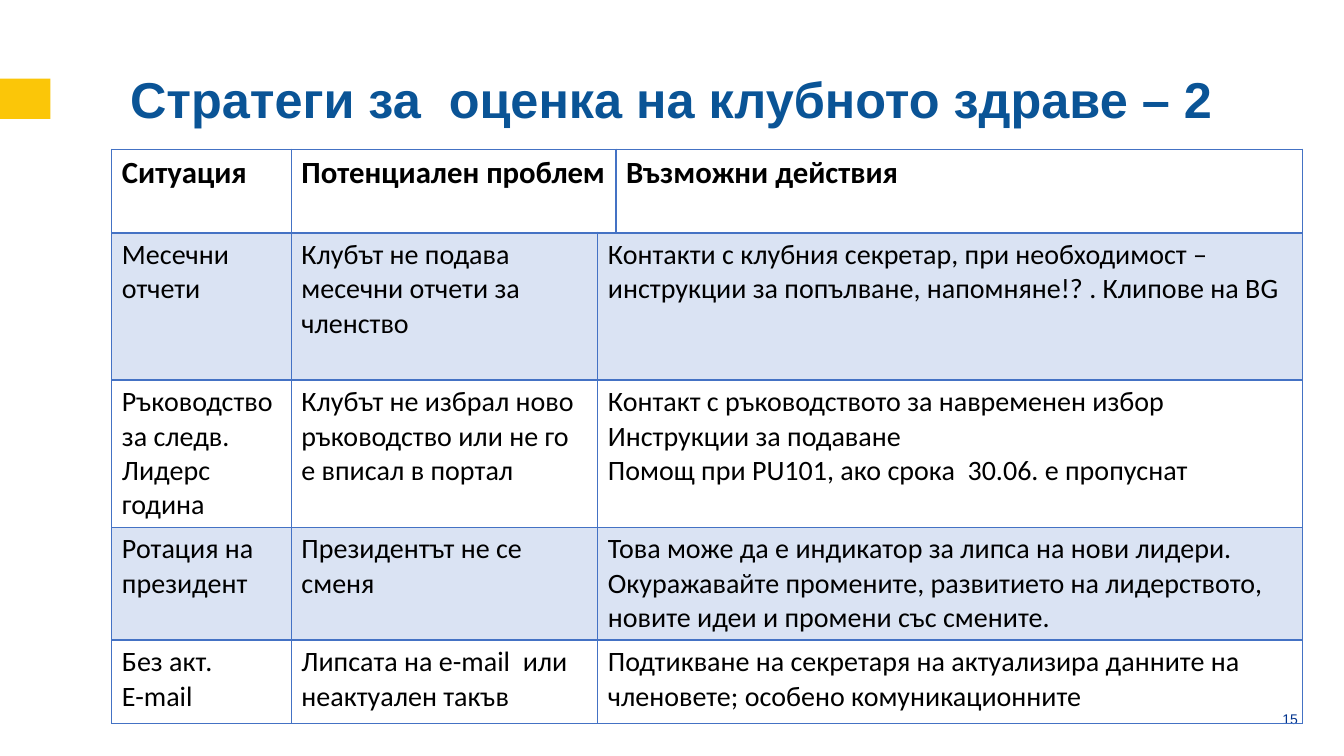
from dataclasses import dataclass

from lxml import etree
from pptx import Presentation
from pptx.dml.color import RGBColor
from pptx.enum.shapes import MSO_SHAPE
from pptx.enum.text import MSO_ANCHOR, MSO_AUTO_SIZE, PP_ALIGN
from pptx.oxml.ns import qn
from pptx.util import Emu, Pt

EMU_PER_PX = 9144  # 100 px to the inch
RECTANGLE = MSO_SHAPE.RECTANGLE
MIDDLE, TOP = MSO_ANCHOR.MIDDLE, MSO_ANCHOR.TOP
LEFT = PP_ALIGN.LEFT
NO_AUTOFIT = MSO_AUTO_SIZE.NONE
TITLE_ONLY_LAYOUT = 5

YELLOW, TITLE_BLUE, NUMBER_BLUE = "FBC608", "0A5496", "00338D"
BORDER_BLUE, BAND_BLUE, BLACK = "4472C4", "DAE3F3", "000000"

COLUMN_WIDTHS = [178, 304, 18, 681]


@dataclass
class TextStyle:
    size: int
    font: str
    color: str
    bold: bool = False


@dataclass
class TableRow:
    height: int
    situation: list[str]
    problem: list[str]
    actions: list[str]


TITLE_STYLE = TextStyle(36, "Arial", TITLE_BLUE, True)
NUMBER_STYLE = TextStyle(10, "Arial", NUMBER_BLUE)
HEADER_STYLE = TextStyle(22, "Calibri", BLACK, True)
BODY_STYLE = TextStyle(20, "Calibri", BLACK)

ROWS = [
    TableRow(83, ["Ситуация"], ["Потенциален проблем"], ["Възможни действия"]),
    TableRow(146, ["Месечни отчети"],
             ["Клубът не подава  месечни отчети за членство"],
             ["Контакти с клубния секретар, при необходимост – инструкции за "
              "попълване, напомняне!? . Клипове на BG"]),
    TableRow(146, ["Ръководство за следв. Лидерс година"],
             ["Клубът не избрал ново ръководство или не го е вписал в портал"],
             ["Контакт с ръководството за навременен избор",
              "Инструкции за подаване",
              "Помощ при PU101, ако срока  30.06. е пропуснат"]),
    TableRow(112, ["Ротация на президент"], ["Президентът не се сменя"],
             ["Това може да е индикатор за липса на нови лидери. Окуражавайте "
              "промените, развитието на лидерството, новите идеи и промени "
              "със смените."]),
    TableRow(83, ["Без акт.", "E-mail"],
             ["Липсата на е-mail  или неактуален такъв"],
             ["Подтикване на секретаря на актуализира данните на членовете; "
              "особено комуникационните"]),
]


def px(length: int) -> Emu:
    return Emu(length * EMU_PER_PX)


def rgb(color: str) -> RGBColor:
    return RGBColor.from_string(color)


def write(text_frame, lines: list[str], style: TextStyle) -> None:
    text_frame.word_wrap = True
    for index, line in enumerate(lines):
        paragraph = text_frame.paragraphs[0] if index == 0 else text_frame.add_paragraph()
        paragraph.alignment = LEFT
        run = paragraph.add_run()
        run.text = line
        run.font.size = Pt(style.size)
        run.font.name = style.font
        run.font.bold = style.bold
        run.font.color.rgb = rgb(style.color)


def set_border(cell, side: str, points: int) -> None:
    properties = cell._tc.get_or_add_tcPr()
    line = etree.SubElement(properties, qn(f"a:ln{side}"), w=str(Pt(points)))
    fill = etree.SubElement(line, qn("a:solidFill"))
    etree.SubElement(fill, qn("a:srgbClr"), val=BORDER_BLUE)


def add_title(slide, text: str) -> None:
    title = slide.shapes.title
    title.left, title.top, title.width, title.height = map(px, (119, 51, 1099, 94))
    title.text_frame.auto_size = NO_AUTOFIT
    title.text_frame.vertical_anchor = MIDDLE
    write(title.text_frame, [text], TITLE_STYLE)


def add_accent(slide) -> None:
    accent = slide.shapes.add_shape(RECTANGLE, px(0), px(78), px(50), px(40))
    accent.shadow.inherit = False
    accent.fill.solid()
    accent.fill.fore_color.rgb = rgb(YELLOW)
    accent.line.fill.background()


def add_strategy_table(slide) -> None:
    frame = slide.shapes.add_table(
        len(ROWS), len(COLUMN_WIDTHS), px(111), px(148),
        px(sum(COLUMN_WIDTHS)), px(sum(row.height for row in ROWS)))
    table = frame.table
    table.first_row = table.horz_banding = False
    for column, width in zip(table.columns, COLUMN_WIDTHS):
        column.width = px(width)

    for index, row in enumerate(ROWS):
        is_header = index == 0
        table.rows[index].height = px(row.height)

        # Borders and banded fill
        for column in range(len(COLUMN_WIDTHS)):
            cell = table.cell(index, column)
            for side in "LRTB":
                thick = (is_header and side == "B") or (index == 1 and side == "T")
                set_border(cell, side, 2 if thick else 1)
            if index % 2:
                cell.fill.solid()
                cell.fill.fore_color.rgb = rgb(BAND_BLUE)
            else:
                cell.fill.background()

        # The narrow third column joins the problem in the header, the actions below
        first_merged = 1 if is_header else 2
        table.cell(index, first_merged).merge(table.cell(index, first_merged + 1))
        actions_column = 3 if is_header else 2
        style = HEADER_STYLE if is_header else BODY_STYLE
        for column, lines in ((0, row.situation), (1, row.problem),
                              (actions_column, row.actions)):
            cell = table.cell(index, column)
            cell.vertical_anchor = TOP
            write(cell.text_frame, lines, style)


def add_slide_number(slide, number: str) -> None:
    box = slide.shapes.add_textbox(px(1262), px(700), px(71), px(50))
    write(box.text_frame, [number], NUMBER_STYLE)


def main() -> None:
    presentation = Presentation()
    presentation.slide_width, presentation.slide_height = px(1333), px(750)
    slide = presentation.slides.add_slide(presentation.slide_layouts[TITLE_ONLY_LAYOUT])
    add_accent(slide)
    add_title(slide, "Стратеги за  оценка на клубното здраве – 2")
    add_slide_number(slide, "15")
    add_strategy_table(slide)
    presentation.save("out.pptx")


if __name__ == "__main__":
    main()
